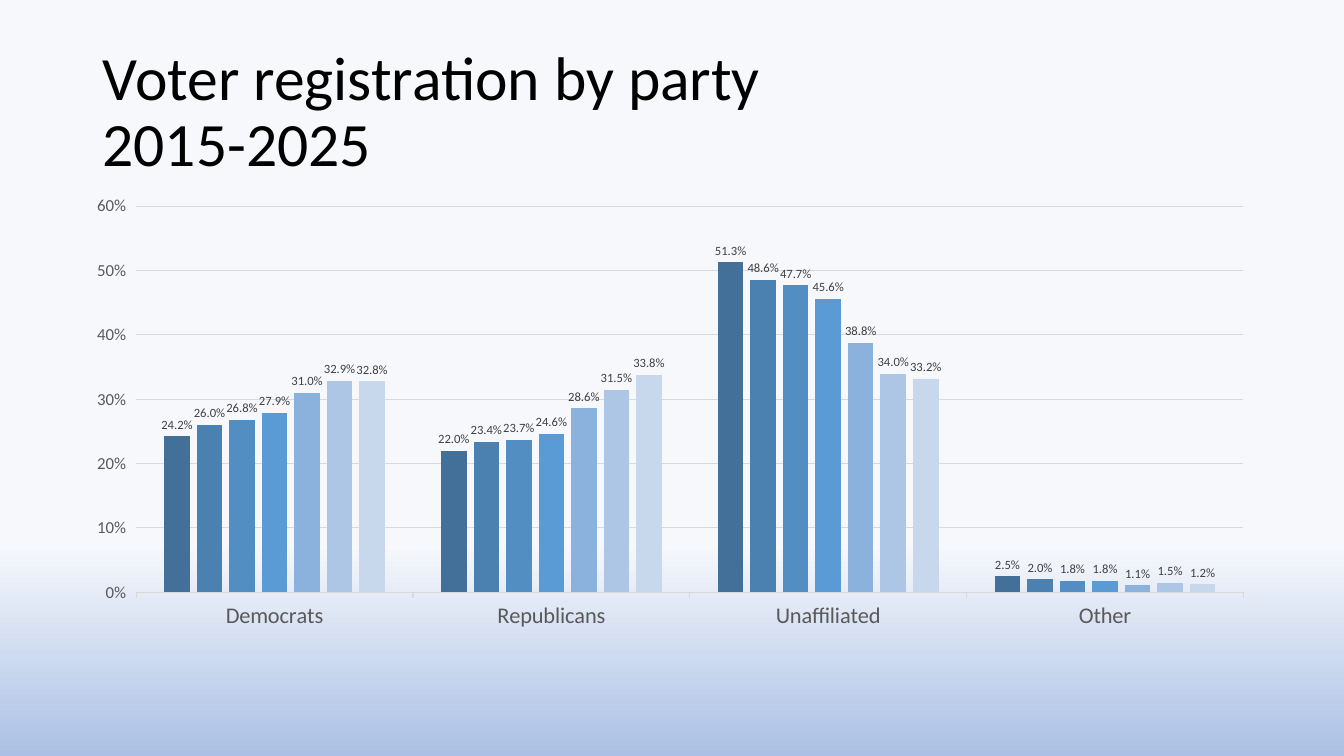
from lxml.etree import SubElement
from pptx import Presentation
from pptx.chart.data import CategoryChartData
from pptx.dml.color import RGBColor
from pptx.enum.chart import XL_CHART_TYPE, XL_LABEL_POSITION, XL_TICK_MARK
from pptx.enum.text import MSO_ANCHOR
from pptx.oxml.ns import qn
from pptx.util import Inches, Pt

FONT = "Calibri"
PARTIES = ["Democrats", "Republicans", "Unaffiliated", "Other"]
YEARS = [
    ("2025", "427099", (0.242, 0.22, 0.513, 0.025)),
    ("2024", "4B81B1", (0.26, 0.234, 0.486, 0.02)),
    ("2023", "538EC3", (0.268, 0.237, 0.477, 0.018)),
    ("2022", "5B9BD5", (0.279, 0.246, 0.456, 0.018)),
    ("2020", "8BB1DD", (0.31, 0.286, 0.388, 0.011)),
    ("2018", "ADC6E5", (0.329, 0.315, 0.34, 0.015)),
    ("2016", "C7D7EC", (0.328, 0.338, 0.332, 0.012)),
]


def color(value):
    """Return the colour for a hex string."""
    return RGBColor.from_string(value)


def style_font(font, size, value):
    """Set the typeface, size and colour of a font."""
    font.name = FONT
    font.size = Pt(size)
    font.color.rgb = color(value)


def style_line(line):
    """Give a chart line its thin grey look."""
    line.color.rgb = color("D9D9D9")
    line.width = Pt(0.75)


def paint_background(slide):
    """Fill the slide with a gradient that darkens near the bottom."""
    fill = slide.background.fill
    fill.gradient()
    fill.gradient_angle = 270
    stops = [(0.72, "F6F8FC"), (1, "ABC0E4")]
    for stop, (position, value) in zip(fill.gradient_stops, stops):
        stop.position = position
        stop.color.rgb = color(value)


def add_title(slide, left, top, width, height):
    """Place the two-line title in the given box."""
    box = slide.shapes.add_textbox(Inches(left), Inches(top), Inches(width), Inches(height))
    text_frame = box.text_frame
    text_frame.word_wrap = True
    text_frame.vertical_anchor = MSO_ANCHOR.MIDDLE
    paragraph = text_frame.paragraphs[0]
    paragraph.text = "Voter registration by party\v2015-2025"
    paragraph.line_spacing = 0.9
    for run in paragraph.runs:
        style_font(run.font, 44, "000000")


def set_plot_layout(chart, **fractions):
    """Fix the inner plot area as fractions of the chart."""
    plot_area = chart.plots[0]._element.getparent()
    layout = plot_area.find(qn("c:layout"))
    if layout is None:
        layout = SubElement(plot_area, qn("c:layout"))
        plot_area.insert(0, layout)
    manual = SubElement(layout, qn("c:manualLayout"))
    settings = {"layoutTarget": "inner", "xMode": "edge", "yMode": "edge", **fractions}
    for name, value in settings.items():
        SubElement(manual, qn(f"c:{name}")).set("val", str(value))


def style_axes(chart):
    """Format the party axis and the percentage axis."""
    party_axis = chart.category_axis
    party_axis.major_tick_mark = XL_TICK_MARK.OUTSIDE
    style_font(party_axis.tick_labels.font, 16, "595959")
    style_line(party_axis.format.line)

    share_axis = chart.value_axis
    share_axis.minimum_scale = 0
    share_axis.maximum_scale = 0.6
    share_axis.major_unit = 0.1
    share_axis.major_tick_mark = XL_TICK_MARK.OUTSIDE
    share_axis.format.line.fill.background()
    style_line(share_axis.major_gridlines.format.line)
    share_axis.tick_labels.number_format = "0%"
    share_axis.tick_labels.number_format_is_linked = False
    style_font(share_axis.tick_labels.font, 12, "595959")


def add_registration_chart(slide, left, top, width, height):
    """Place the clustered columns of yearly registration in the given box."""
    data = CategoryChartData(number_format="0.0%")
    data.categories = PARTIES
    for year, _, shares in YEARS:
        data.add_series(year, shares)
    chart = slide.shapes.add_chart(
        XL_CHART_TYPE.COLUMN_CLUSTERED,
        Inches(left), Inches(top), Inches(width), Inches(height), data,
    ).chart
    chart.has_title = False
    chart.has_legend = False
    style_font(chart.font, 10, "000000")
    set_plot_layout(chart, x=0.05, y=0.04, w=0.93, h=0.78)
    style_axes(chart)

    plot = chart.plots[0]
    plot.vary_by_categories = False
    plot.gap_width = 219
    plot.overlap = -27
    for series, (_, value, _) in zip(plot.series, YEARS):
        series.format.fill.solid()
        series.format.fill.fore_color.rgb = color(value)
        labels = series.data_labels
        labels.show_value = True
        labels.position = XL_LABEL_POSITION.OUTSIDE_END
        labels.number_format = "0.0%"
        labels.number_format_is_linked = False
        style_font(labels.font, 9, "404040")


def main():
    """Build the slide and save it."""
    presentation = Presentation()
    presentation.slide_width = Inches(13.33)
    presentation.slide_height = Inches(7.5)
    slide = presentation.slides.add_slide(presentation.slide_layouts[6])
    paint_background(slide)
    add_title(slide, 0.92, 0.4, 11.5, 1.45)
    add_registration_chart(slide, 0.76, 1.85, 11.81, 4.91)
    presentation.save("out.pptx")


if __name__ == "__main__":
    main()
